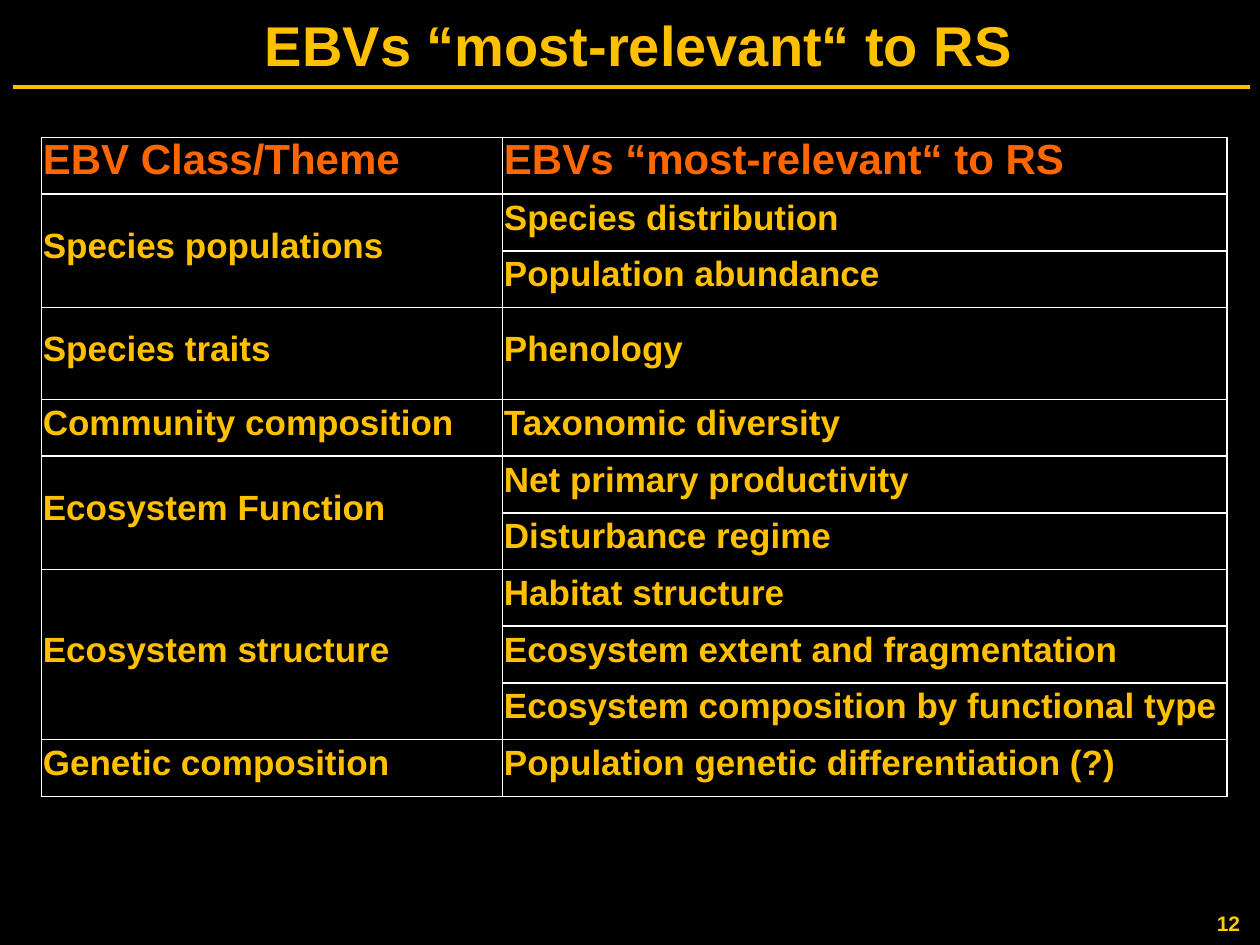
from dataclasses import dataclass

from lxml import etree
from pptx import Presentation
from pptx.dml.color import RGBColor
from pptx.enum.shapes import MSO_CONNECTOR
from pptx.enum.text import MSO_ANCHOR, PP_ALIGN
from pptx.oxml.ns import qn
from pptx.util import Inches, Pt

LEFT, CENTER = PP_ALIGN.LEFT, PP_ALIGN.CENTER
TOP, MIDDLE = MSO_ANCHOR.TOP, MSO_ANCHOR.MIDDLE
STRAIGHT = MSO_CONNECTOR.STRAIGHT


@dataclass(frozen=True)
class Theme:
    font: str = "Arial"
    back: str = "000000"
    gold: str = "FFC000"
    page: str = "FFCC00"
    head: str = "FF6600"
    grid: str = "FFFFFF"
    title_size: int = 32
    head_size: int = 24
    body_size: int = 20
    page_size: int = 12


@dataclass(frozen=True)
class Style:
    size: int
    color: str
    align: PP_ALIGN = LEFT
    spacing: float = 0.6
    before: float = 0.3  # share of the type size


@dataclass(frozen=True)
class Group:
    name: str
    items: tuple[str, ...]
    height: float = 0.45  # inches per row


THEME = Theme()
TITLE = Style(THEME.title_size, THEME.gold, CENTER, 0.8, 0)
HEAD = Style(THEME.head_size, THEME.head)
BODY = Style(THEME.body_size, THEME.gold)
PAGE = Style(THEME.page_size, THEME.page, CENTER)

HEADING = "EBVs “most-relevant“ to RS"
GROUPS = (
    Group("EBV Class/Theme", (HEADING,)),
    Group("Species populations", ("Species distribution", "Population abundance")),
    Group("Species traits", ("Phenology",), 0.73),
    Group("Community composition", ("Taxonomic diversity",)),
    Group("Ecosystem Function", ("Net primary productivity", "Disturbance regime")),
    Group("Ecosystem structure", ("Habitat structure",
                                  "Ecosystem extent and fragmentation",
                                  "Ecosystem composition by functional type")),
    Group("Genetic composition", ("Population genetic differentiation (?)",)),
)
WIDTHS = (3.66, 5.75)


def write(frame, text: str, style: Style) -> None:
    para = frame.paragraphs[0]
    para.text = text
    para.alignment = style.align
    para.line_spacing = style.spacing
    para.space_before = Pt(style.before * style.size)
    font = para.font
    font.name, font.size, font.bold = THEME.font, Pt(style.size), True
    font.color.rgb = RGBColor.from_string(style.color)


def add_text(slide, box: tuple[float, ...], text: str, style: Style, anchor) -> None:
    frame = slide.shapes.add_textbox(*map(Inches, box)).text_frame
    frame.word_wrap = True
    frame.vertical_anchor = anchor
    write(frame, text, style)


def add_rule(slide, left: float, right: float, y: float) -> None:
    line = slide.shapes.add_connector(
        STRAIGHT, Inches(left), Inches(y), Inches(right), Inches(y))
    line.line.color.rgb = RGBColor.from_string(THEME.gold)
    line.line.width = Pt(2)
    etree.SubElement(line._element.spPr, qn("a:effectLst"))


def format_cell(cell) -> None:
    cell.margin_left = cell.margin_right = cell.margin_top = Inches(0.01)
    cell.margin_bottom = 0
    cell.vertical_anchor = MIDDLE
    props = cell._tc.get_or_add_tcPr()
    for side in ("lnL", "lnR", "lnT", "lnB"):
        edge = etree.SubElement(props, qn(f"a:{side}"), w=str(Pt(1)))
        fill = etree.SubElement(edge, qn("a:solidFill"))
        etree.SubElement(fill, qn("a:srgbClr"), val=THEME.grid)
    cell.fill.background()


def add_grid(slide, left: float, top: float) -> None:
    heights = [group.height for group in GROUPS for _ in group.items]
    table = slide.shapes.add_table(
        len(heights), len(WIDTHS), Inches(left), Inches(top),
        Inches(sum(WIDTHS)), Inches(sum(heights))).table
    table.first_row = table.horz_banding = False
    for col, width in zip(table.columns, WIDTHS):
        col.width = Inches(width)
    for row, height in zip(table.rows, heights):
        row.height = Inches(height)
    for cell in table.iter_cells():
        format_cell(cell)

    # Each class spans the rows of its variables
    start = 0
    for group in GROUPS:
        style = BODY if start else HEAD
        first = table.cell(start, 0)
        write(first.text_frame, group.name, style)
        for row, item in enumerate(group.items, start):
            write(table.cell(row, 1).text_frame, item, style)
        end = start + len(group.items)
        if end - start > 1:
            first.merge(table.cell(end - 1, 0))
        start = end


def main() -> None:
    deck = Presentation()
    deck.slide_width, deck.slide_height = Inches(10), Inches(7.5)
    slide = deck.slides.add_slide(deck.slide_layouts[6])
    slide.background.fill.solid()
    slide.background.fill.fore_color.rgb = RGBColor.from_string(THEME.back)

    # Frame: rule, page number and title
    add_rule(slide, 0.1, 9.92, 0.69)
    add_text(slide, (9.5, 7.25, 0.5, 0.23), "12", PAGE, TOP)
    add_text(slide, (1.17, 0.17, 7.8, 0.46), HEADING, TITLE, MIDDLE)

    # Classes and their variables
    add_grid(slide, 0.33, 1.09)
    deck.save("out.pptx")


if __name__ == "__main__":
    main()
